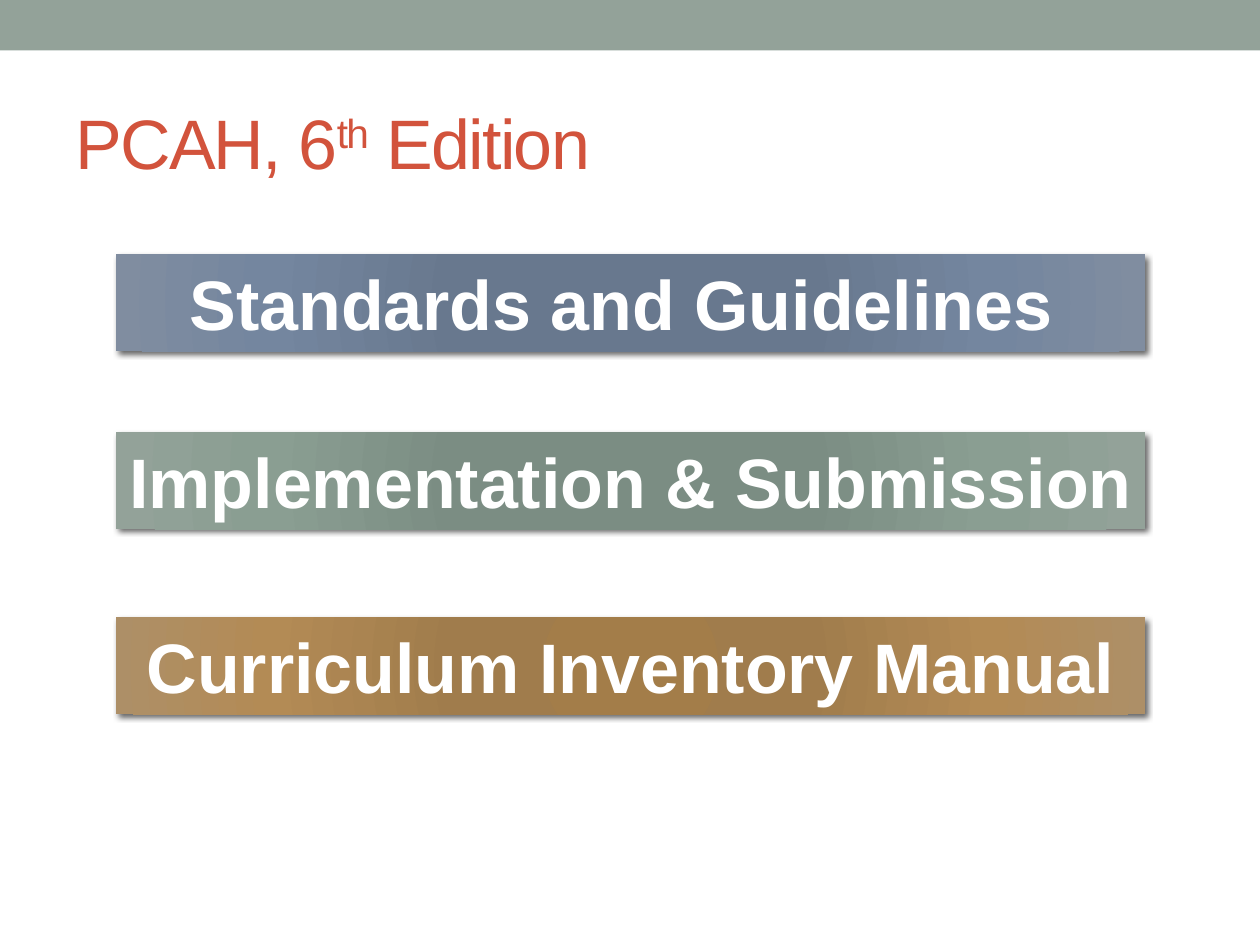
from lxml.etree import SubElement
from pptx import Presentation
from pptx.dml.color import RGBColor
from pptx.enum.shapes import MSO_SHAPE
from pptx.enum.text import MSO_ANCHOR, MSO_AUTO_SIZE, PP_ALIGN
from pptx.oxml import parse_xml
from pptx.oxml.ns import nsdecls, qn
from pptx.util import Inches, Pt

# Content
TITLE = [("PCAH, 6", 0), ("th", 30), (" Edition", 0)]  # text, superscript %
BARS = [  # text, top, gradient name
    ("Standards and Guidelines ", 2.02, "blue"),
    ("Implementation & Submission", 3.43, "green"),
    ("Curriculum Inventory Manual", 4.9, "brown"),
]
COLORS = {"band": "93A299", "title": "D2533C", "bar_text": "FFFFFF", "shadow": "000000"}
GRADIENTS = {
    "blue": ["677790", "68788E", "74869F", "808DA0"],
    "green": ["7B8E82", "7B8D83", "8A9E92", "93A299"],
    "brown": ["A37D49", "A07C4C", "B38B55", "AD8F67"],
}
STOPS = [0, 34, 70, 100]
BAR_LEFT, BAR_W, BAR_H = 0.92, 8.17, 0.77


def add_text(p, text, color, size=40, bold=False, spacing=0, raised=0):
    r = p.add_run()
    r.text = text
    r.font.name = "Arial"
    r.font.size = Pt(size)
    r.font.bold = bold
    r.font.color.rgb = RGBColor.from_string(COLORS[color])
    if spacing:
        r.font._element.set("spc", str(spacing * 100))
    if raised:
        r.font._element.set("baseline", str(raised * 1000))


def add_rect(s, left, top, width, height):
    sp = s.shapes.add_shape(MSO_SHAPE.RECTANGLE, Inches(left), Inches(top),
                            Inches(width), Inches(height))
    sp.shadow.inherit = False
    sp.line.fill.background()
    return sp


def set_radial_fill(sp, colors):
    stops = "".join(f'<a:gs pos="{pos * 1000}"><a:srgbClr val="{c}"/></a:gs>'
                    for pos, c in zip(STOPS, colors))
    fill = parse_xml(
        f'<a:gradFill {nsdecls("a")} rotWithShape="1"><a:gsLst>{stops}</a:gsLst>'
        '<a:path path="circle"><a:fillToRect l="100000" t="100000" r="100000" b="100000"/>'
        '</a:path></a:gradFill>')
    sp._element.spPr.find(qn("a:prstGeom")).addnext(fill)


def add_shadow(sp, blur=3, dist=2, angle=45, alpha=60):
    effects = sp._element.spPr.find(qn("a:effectLst"))
    shadow = SubElement(effects, qn("a:outerShdw"), blurRad=str(Pt(blur)),
                        dist=str(Pt(dist)), dir=str(angle * 60000), rotWithShape="0")
    color = SubElement(shadow, qn("a:srgbClr"), val=COLORS["shadow"])
    SubElement(color, qn("a:alpha"), val=str(alpha * 1000))


prs = Presentation()
prs.slide_width, prs.slide_height = Inches(10), Inches(7.5)
s = prs.slides.add_slide(prs.slide_layouts[6])

# Top band
band = add_rect(s, 0, 0, 10, 0.4)
band.fill.solid()
band.fill.fore_color.rgb = RGBColor.from_string(COLORS["band"])

# Title
tf = s.shapes.add_textbox(Inches(0.5), Inches(0.58), Inches(9), Inches(1.08)).text_frame
tf.word_wrap = True
tf.vertical_anchor = MSO_ANCHOR.MIDDLE
for text, raised in TITLE:
    add_text(tf.paragraphs[0], text, "title", spacing=-1, raised=raised)

# Gradient bars
for text, top, gradient in BARS:
    sp = add_rect(s, BAR_LEFT, top, BAR_W, BAR_H)
    set_radial_fill(sp, GRADIENTS[gradient])
    add_shadow(sp)
    tf = sp.text_frame
    tf.word_wrap = True
    tf.auto_size = MSO_AUTO_SIZE.SHAPE_TO_FIT_TEXT
    tf.vertical_anchor = MSO_ANCHOR.TOP
    p = tf.paragraphs[0]
    p.alignment = PP_ALIGN.CENTER
    add_text(p, text, "bar_text", bold=True)

prs.save("out.pptx")
